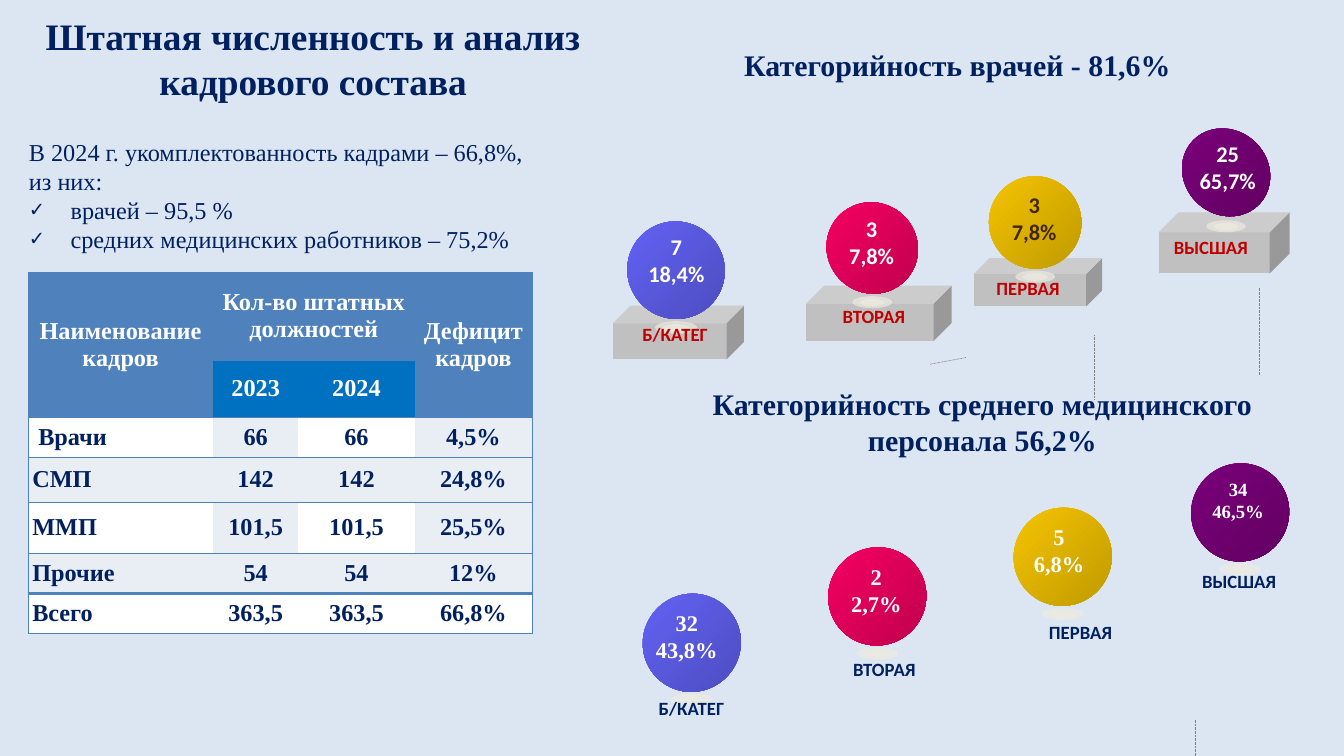
from lxml.etree import SubElement
from pptx import Presentation
from pptx.dml.color import RGBColor
from pptx.enum.dml import MSO_LINE
from pptx.enum.shapes import MSO_CONNECTOR, MSO_SHAPE
from pptx.enum.text import MSO_ANCHOR, MSO_AUTO_SIZE, PP_ALIGN
from pptx.oxml.ns import qn
from pptx.util import Inches, Pt

NAVY, WHITE, RED, BROWN = "002060", "FFFFFF", "C00000", "412705"
BLUE, BRIGHT_BLUE, PALE = "4F81BD", "0070C0", "E9EDF4"
SERIF, SANS = "Times New Roman", "Calibri"
NO_STYLE = "{2D5ABB26-0587-4C30-8999-92F81FD0307C}"
CENTER, LEFT = PP_ALIGN.CENTER, PP_ALIGN.LEFT
SPHERE_COLORS = [("6666FF", "4949B6"), ("FF0066", "B60049"),
                 ("FFCC00", "B69200"), ("800080", "5C005C")]
CATEGORIES = ["Б/КАТЕГ", "ВТОРАЯ", "ПЕРВАЯ", "ВЫСШАЯ"]


def rgb(color):
    return RGBColor.from_string(color)


def inches(*lengths):
    return [Inches(length) for length in lengths]


def set_attributes(target, values):
    for name, value in values.items():
        setattr(target, name, value)


def write(frame, lines, size, font, color, bold=True, align=CENTER):
    """Fill a text frame with one paragraph per line."""
    for index, line in enumerate(lines):
        paragraph = frame.paragraphs[0] if index == 0 else frame.add_paragraph()
        set_attributes(paragraph, {"alignment": align, "space_before": Pt(0)})
        run = paragraph.add_run()
        run.text = line
        set_attributes(run.font, {"size": Pt(size), "name": font, "bold": bold})
        run.font.color.rgb = rgb(color)


def add_text(slide, box, lines, size, font, color, align=CENTER,
             anchor=MSO_ANCHOR.TOP, wrap=True):
    frame = slide.shapes.add_textbox(*inches(*box)).text_frame
    set_attributes(frame, {"word_wrap": wrap, "vertical_anchor": anchor})
    write(frame, lines, size, font, color, align=align)
    return frame


def add_plain_shape(shapes, kind, box, color):
    shape = shapes.add_shape(kind, *inches(*box))
    shape.shadow.inherit = False
    shape.line.fill.background()
    shape.fill.solid()
    shape.fill.fore_color.rgb = rgb(color)
    return shape


def add_sphere(slide, box, colors):
    """Group a shaded ball with the two glows below it."""
    left, top, width, height = box
    shapes = slide.shapes.add_group_shape().shapes
    ball = add_plain_shape(shapes, MSO_SHAPE.OVAL, box, colors[0])
    ball.rotation = 313.8
    ball.fill.gradient()
    ball.fill.gradient_angle = 270
    for stop, color, position in zip(ball.fill.gradient_stops, colors, (0, 1)):
        stop.color.rgb = rgb(color)
        stop.position = position
    for drop, wide, high in [(1.02, 0.43, 0.13), (1.05, 0.27, 0.08)]:
        glow_box = (left + (width - wide * height) / 2, top + drop * height,
                    wide * height, high * height)
        glow = add_plain_shape(shapes, MSO_SHAPE.OVAL, glow_box, "EEECE1")
        color_element = glow.fill._xPr.find(f".//{qn('a:srgbClr')}")
        SubElement(color_element, qn("a:alpha"), val="65000")


def add_dotted_line(slide, start, end):
    line = slide.shapes.add_connector(MSO_CONNECTOR.STRAIGHT, *inches(*start, *end))
    set_attributes(line.line, {"width": Pt(0.75), "dash_style": MSO_LINE.ROUND_DOT})
    line.line.color.rgb = rgb("808080")
    SubElement(line._element.spPr, qn("a:effectLst"))


def add_category_steps(slide, left, top, steps, label_color, font):
    """Draw rising spheres; each step's boxes are relative to left and top."""
    def place(box):
        return (left + box[0], top + box[1], *box[2:])

    for step, category, colors in zip(steps, CATEGORIES, SPHERE_COLORS):
        if "cube" in step:
            cube = add_plain_shape(slide.shapes, MSO_SHAPE.CUBE,
                                   place(step["cube"]), "C0C0C0")
            cube.adjustments[0] = 0.327
        add_sphere(slide, place(step["sphere"]), colors)
        add_text(slide, place(step["label"]), [category], 20, SANS, label_color,
                 step.get("align", CENTER), MSO_ANCHOR.MIDDLE)
        add_text(slide, place(step["value_box"]), step["values"], step.get("size", 24),
                 font, step.get("color", WHITE), wrap=False)


def add_doctors(slide, left, top):
    heading = add_text(slide, (left + 1.76, top - 1.53, 6.74, 0.9),
                       ["Категорийность врачей - 81,6%"], 32, SERIF, NAVY)
    set_attributes(heading, dict.fromkeys(
        ("margin_left", "margin_right", "margin_top", "margin_bottom"), 0))
    heading.paragraphs[0].line_spacing = Pt(63.5)
    steps = [
        {"cube": (0, 2.67, 1.95, 0.8), "sphere": (0.22, 1.41, 1.44, 1.46),
         "label": (0.22, 2.87, 1.41, 0.44), "value_box": (0.33, 1.54, 1.23, 0.91),
         "values": ["7", "18,4%"]},
        {"cube": (2.87, 2.37, 2.17, 0.83), "sphere": (3.19, 1.12, 1.34, 1.38),
         "label": (3.19, 2.61, 1.39, 0.44), "value_box": (3.26, 1.27, 1.18, 0.91),
         "values": ["3", "7,8%"]},
        {"cube": (5.37, 1.96, 1.91, 0.72), "sphere": (5.6, 0.74, 1.37, 1.38),
         "label": (5.61, 2.18, 1.37, 0.44), "value_box": (5.52, 0.92, 1.5, 0.91),
         "values": ["3", "7,8%"], "align": LEFT, "color": BROWN},
        {"cube": (8.12, 1.28, 1.95, 0.91), "sphere": (8.5, 0, 1.25, 1.37),
         "label": (8.25, 1.57, 1.51, 0.44), "value_box": (8.58, 0.15, 1.14, 0.91),
         "values": ["25", "65,7%"], "align": LEFT},
    ]
    for x1, y1, x2, y2 in [(4.72, 3.54, 5.26, 3.44), (7.17, 3.11, 7.17, 4.06),
                           (9.62, 2.4, 9.62, 3.7)]:
        add_dotted_line(slide, (left + x1, top + y1), (left + x2, top + y2))
    add_category_steps(slide, left, top, steps, RED, SANS)


def add_nurses(slide, left, top):
    add_text(slide, (left + 0.61, top - 1.21, 8.9, 1.27),
             ["Категорийность среднего медицинского персонала 56,2%"], 32, SERIF, NAVY)
    steps = [
        {"sphere": (0, 1.94), "label": (-0.03, 3.42, 1.52, 0.44),
         "value_box": (0.01, 2.12, 1.3, 0.91), "values": ["32", "43,8%"]},
        {"sphere": (2.76, 1.25), "label": (2.85, 2.84, 1.5, 0.44),
         "value_box": (2.97, 1.43, 1.02, 0.91), "values": ["2", "2,7%"]},
        {"sphere": (5.52, 0.66), "label": (5.78, 2.28, 1.48, 0.44),
         "value_box": (5.72, 0.84, 0.96, 0.91), "values": ["5", "6,8%"]},
        {"sphere": (8.16, 0), "label": (8.23, 1.52, 1.63, 0.44),
         "value_box": (8.25, 0.16, 1.23, 0.77), "values": ["34", "46,5%"],
         "align": LEFT, "size": 20},
    ]
    for step in steps:
        step["sphere"] += (1.47, 1.45)
    add_dotted_line(slide, (left + 8.23, top + 3.81), (left + 8.23, top + 4.35))
    add_category_steps(slide, left, top, steps, NAVY, SERIF)


def fill_cell(cell, text, fill, color, align, borders):
    set_attributes(cell, {"margin_left": Inches(0.06), "margin_right": Inches(0.06),
                          "margin_top": 0, "margin_bottom": 0,
                          "vertical_anchor": MSO_ANCHOR.MIDDLE})
    properties = cell._tc.get_or_add_tcPr()
    for side in "LRTB":
        if side in borders:
            line = SubElement(properties, qn(f"a:ln{side}"), w=str(Pt(borders[side])))
            solid = SubElement(line, qn("a:solidFill"))
            SubElement(solid, qn("a:srgbClr"), val=BLUE)
    cell.fill.solid()
    cell.fill.fore_color.rgb = rgb(fill)
    if text:
        write(cell.text_frame, [text], 26, SERIF, color, align=align)


def add_staff_table(slide, left, top):
    widths = [2.75, 1.27, 1.73, 1.75]
    heights = [1.31, 0.85, 0.6, 0.66, 0.76, 0.6, 0.6]
    striped, shaded, plain = [WHITE, PALE] * 2, [PALE] * 4, [WHITE] * 4
    rows = [
        (["Наименование кадров", "Кол-во штатных должностей", "", "Дефицит кадров"],
         [BLUE] * 4),
        (["", "2023", "2024", ""], [BLUE, BRIGHT_BLUE, BRIGHT_BLUE, BLUE]),
        (["Врачи", "66", "66", "4,5%"], striped),
        (["СМП", "142", "142", "24,8%"], shaded),
        (["ММП", "101,5", "101,5", "25,5%"], striped),
        (["Прочие", "54", "54", "12%"], shaded),
        (["Всего", "363,5", "363,5", "66,8%"], plain),
    ]
    table = slide.shapes.add_table(
        len(rows), len(widths), *inches(left, top, sum(widths), sum(heights))).table
    set_attributes(table, {"first_row": False, "horz_banding": False})
    table._tbl.tblPr[0].text = NO_STYLE
    for column, width in zip(table.columns, widths):
        column.width = Inches(width)
    for row, height in zip(table.rows, heights):
        row.height = Inches(height)
    for r, (texts, fills) in enumerate(rows):
        for c, (text, fill) in enumerate(zip(texts, fills)):
            borders = {"T": 4 if r == len(rows) - 1 else 1, "B": 1}
            if c in (0, 3):
                borders["L" if c == 0 else "R"] = 1
            fill_cell(table.cell(r, c), text, fill, WHITE if r < 2 else NAVY,
                      LEFT if r > 1 and c == 0 else CENTER, borders)
    table.cell(2, 0).margin_left = Inches(0.15)
    for first, last in [((0, 0), (1, 0)), ((0, 1), (0, 2)), ((0, 3), (1, 3))]:
        table.cell(*first).merge(table.cell(*last))


def place_placeholder(shape, box, anchor):
    set_attributes(shape, dict(zip(("left", "top", "width", "height"), inches(*box))))
    set_attributes(shape.text_frame, {"word_wrap": True, "vertical_anchor": anchor,
                                      "auto_size": MSO_AUTO_SIZE.NONE})
    return shape.text_frame


def add_title(slide, box):
    frame = place_placeholder(slide.shapes.title, box, MSO_ANCHOR.TOP)
    write(frame, ["Штатная численность и анализ кадрового состава"], 40, SERIF, NAVY)


def add_staffing_list(slide, box):
    frame = place_placeholder(slide.placeholders[1], box, MSO_ANCHOR.MIDDLE)
    set_attributes(frame, {"margin_left": Inches(0.07), "margin_right": Inches(0.07),
                           "margin_top": Inches(0.04), "margin_bottom": Inches(0.04)})
    write(frame, ["В 2024 г. укомплектованность кадрами – 66,8%, из них:",
                  "врачей – 95,5 %", "средних медицинских работников – 75,2%"],
          26, SERIF, NAVY, bold=False, align=LEFT)
    for index, paragraph in enumerate(frame.paragraphs):
        properties = paragraph._p.get_or_add_pPr()
        indent = Inches(0.62) if index else 0
        properties.set("marL", str(indent))
        properties.set("indent", str(-indent))
        if index:
            SubElement(properties, qn("a:buSzPct"), val="80000")
            SubElement(properties, qn("a:buChar"), char="✓")
        else:
            SubElement(properties, qn("a:buNone"))


def main():
    presentation = Presentation()
    set_attributes(presentation, {"slide_width": Inches(20),
                                  "slide_height": Inches(11.25)})
    slide = presentation.slides.add_slide(presentation.slide_layouts[1])
    slide.background.fill.solid()
    slide.background.fill.fore_color.rgb = rgb("DCE6F2")
    add_title(slide, (-0.02, 0.15, 9.36, 1.17))
    add_staffing_list(slide, (0.36, 2.03, 7.55, 1.75))
    add_staff_table(slide, 0.42, 4.05)
    add_doctors(slide, 9.12, 1.88)
    add_nurses(slide, 9.56, 6.9)
    presentation.save("out.pptx")


if __name__ == "__main__":
    main()
